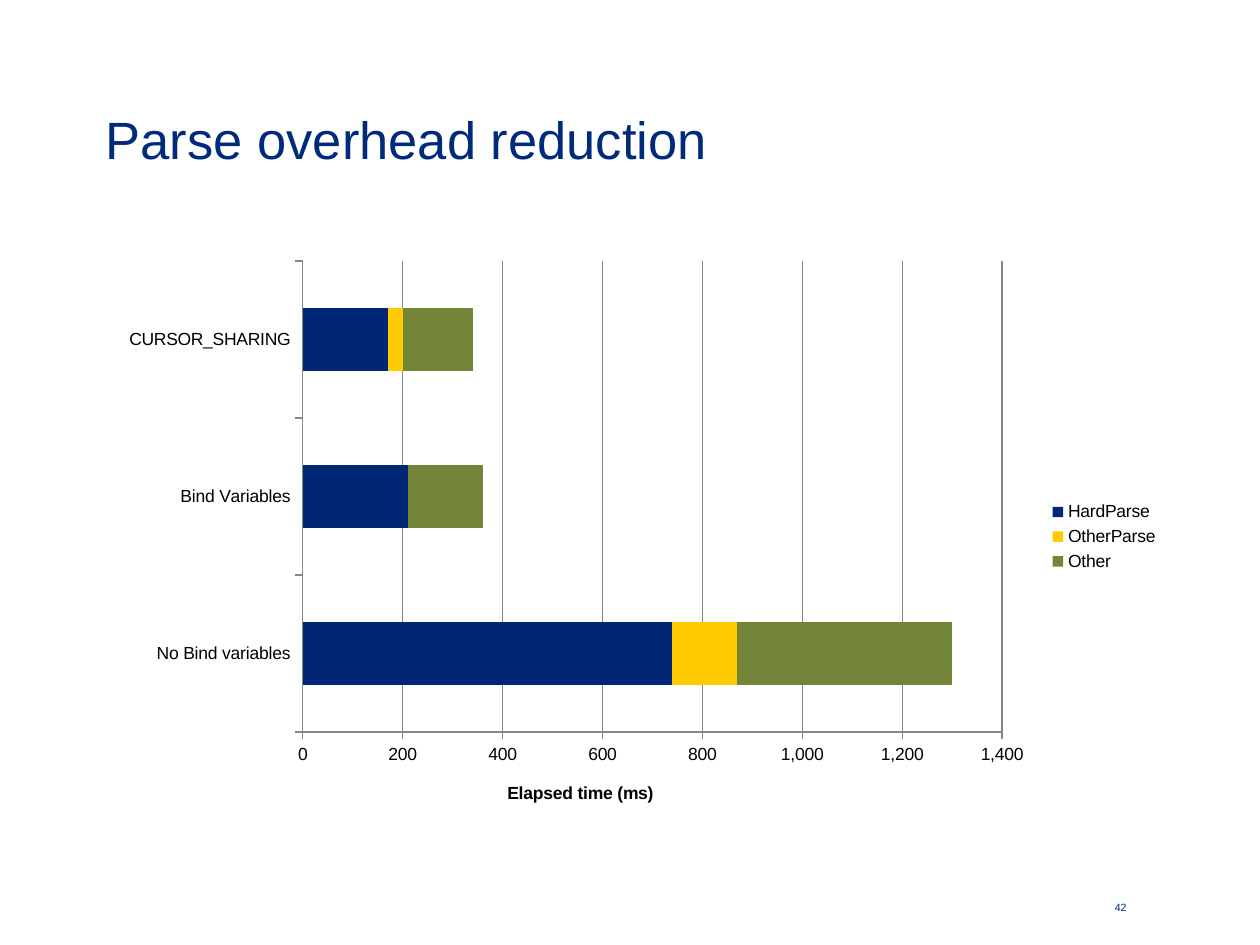
from pptx import Presentation
from pptx.chart.data import CategoryChartData
from pptx.dml.color import RGBColor
from pptx.enum.chart import XL_CHART_TYPE as ChartType
from pptx.enum.chart import XL_LEGEND_POSITION as LegendPosition
from pptx.enum.chart import XL_TICK_MARK as TickMark
from pptx.enum.text import MSO_ANCHOR as Anchor
from pptx.enum.text import PP_ALIGN as Align
from pptx.oxml import parse_xml
from pptx.oxml.ns import nsdecls, qn
from pptx.util import Cm, Pt

CATEGORIES = ["No Bind variables", "Bind Variables", "CURSOR_SHARING"]
SERIES = {
    "HardParse": ("002776", [740, 210, 170]),
    "OtherParse": ("FFCB00", [130, 0, 30]),
    "Other": ("738539", [430, 150, 140]),
}


def color(value):
    """Turn a hex string into a colour."""
    return RGBColor.from_string(value)


def set_format(target, values):
    """Set each attribute named in a dict of format values."""
    for name, value in values.items():
        setattr(target, name, value)


def style_font(font, size, shade, bold=False):
    """Apply the slide's typeface with a size and colour."""
    set_format(font, {"name": "Arial", "size": Pt(size), "bold": bold})
    font.color.rgb = color(shade)


def style_line(line):
    """Draw a thin grey chart line."""
    line.color.rgb = color("868686")
    line.width = Pt(0.75)


def place(shape, box):
    """Move a shape to a left, top, width, height box in centimetres."""
    names = ("left", "top", "width", "height")
    set_format(shape, dict(zip(names, map(Cm, box))))


def set_layout(element, position, **fractions):
    """Give a chart part a manual layout as fractions of the chart."""
    for old in element.findall(qn("c:layout")):
        element.remove(old)
    target = '<c:layoutTarget val="inner"/>' if "w" in fractions else ""
    modes = "".join(f'<c:{key}Mode val="edge"/>' for key in "xy")
    values = "".join(f'<c:{key} val="{value}"/>' for key, value in fractions.items())
    element.insert(position, parse_xml(
        f'<c:layout {nsdecls("c")}><c:manualLayout>{target}{modes}{values}'
        "</c:manualLayout></c:layout>"))


def add_title(page, box):
    """Fill the title placeholder."""
    title = page.shapes.title
    place(title, box)
    frame = title.text_frame
    set_format(frame, {"text": "Parse overhead reduction", "word_wrap": True,
                       "vertical_anchor": Anchor.MIDDLE})
    para = frame.paragraphs[0]
    para.alignment = Align.LEFT
    style_font(para.runs[0].font, 30, "002B7C")


def add_page_number(page, box):
    """Write the page number at the lower right."""
    frame = page.shapes.add_textbox(*map(Cm, box)).text_frame
    set_format(frame, {"text": "42", "word_wrap": True,
                       "vertical_anchor": Anchor.BOTTOM})
    para = frame.paragraphs[0]
    para.alignment = Align.RIGHT
    style_font(para.runs[0].font, 6, "002776")


def style_axes(chart):
    """Format both axes, the gridlines and the axis title."""
    value_axis = chart.value_axis
    set_format(value_axis, {"minimum_scale": 0, "maximum_scale": 1400,
                            "major_unit": 200, "has_major_gridlines": True})
    style_line(value_axis.major_gridlines.format.line)
    for axis in (chart.category_axis, value_axis):
        axis.major_tick_mark = TickMark.OUTSIDE
        style_line(axis.format.line)
    labels = value_axis.tick_labels
    set_format(labels, {"number_format": "#,##0", "number_format_is_linked": False})

    title = value_axis.axis_title
    title.text_frame.text = "Elapsed time (ms)"
    style_font(title.text_frame.paragraphs[0].runs[0].font, 10, "000000", bold=True)
    set_layout(title._element, 1, x=0.37, y=0.92)


def add_parse_chart(page, box):
    """Add the stacked bars of elapsed time per parse method."""
    data = CategoryChartData(number_format="#,##0")
    data.categories = CATEGORIES
    for name, (_, values) in SERIES.items():
        data.add_series(name, values)
    chart = page.shapes.add_chart(ChartType.BAR_STACKED, *map(Cm, box), data).chart
    set_format(chart, {"has_title": False, "has_legend": True})
    style_font(chart.font, 10, "000000")
    set_format(chart.legend, {"position": LegendPosition.RIGHT,
                              "include_in_layout": False})

    plot = chart.plots[0]
    set_format(plot, {"gap_width": 150, "overlap": 100, "vary_by_categories": False})
    for series, (shade, _) in zip(plot.series, SERIES.values()):
        series.format.fill.solid()
        series.format.fill.fore_color.rgb = color(shade)
    style_axes(chart)
    plot_area = chart._chartSpace.chart.plotArea
    set_layout(plot_area, 0, x=0.18, y=0.02, w=0.66, h=0.82)


def main():
    """Build and save the deck."""
    deck = Presentation()
    set_format(deck, {"slide_width": Cm(25.4), "slide_height": Cm(19.05)})
    page = deck.slides.add_slide(deck.slide_layouts[5])
    add_page_number(page, (21.41, 17.86, 1.55, 0.69))
    add_title(page, (1.88, 2.03, 21.62, 1.52))
    add_parse_chart(page, (2.26, 5.03, 21.36, 11.58))
    deck.save("out.pptx")


if __name__ == "__main__":
    main()
